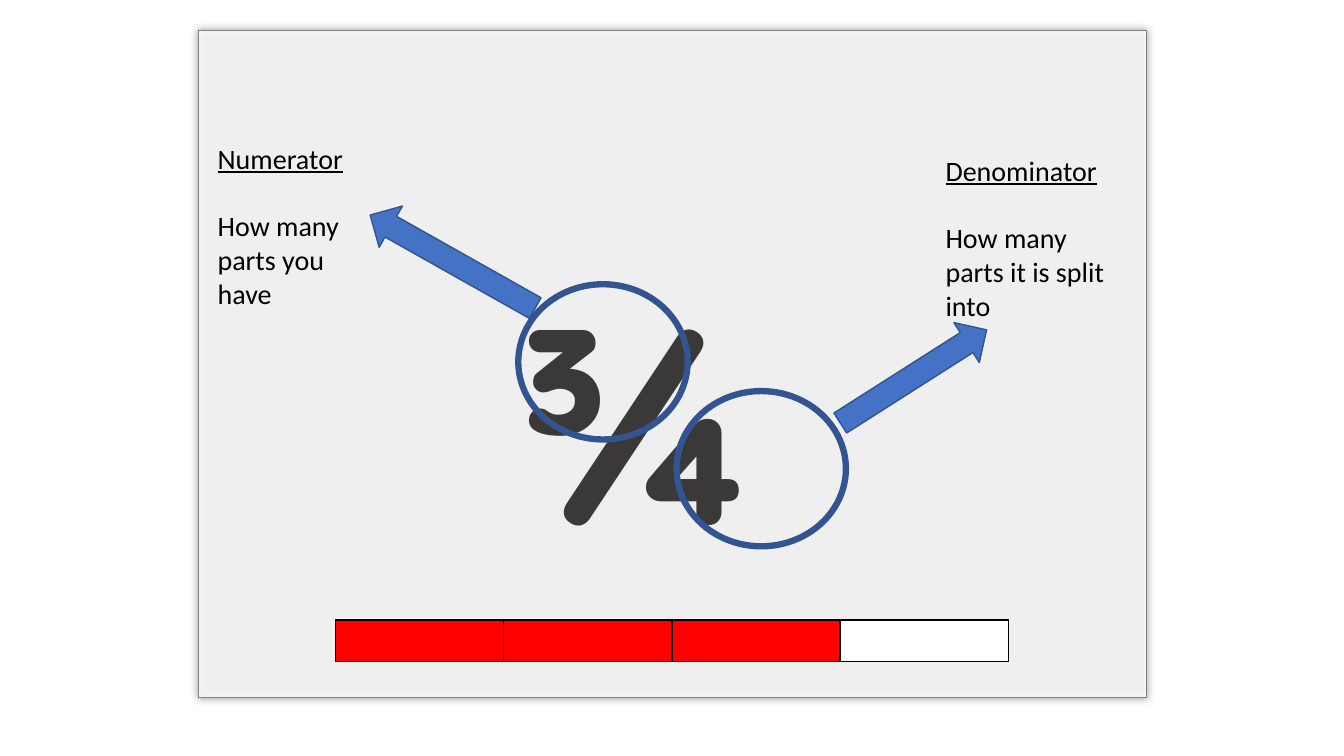
from lxml.etree import SubElement as Sub
from pptx import Presentation
from pptx.dml.color import RGBColor
from pptx.enum.shapes import MSO_SHAPE as Kind
from pptx.enum.text import MSO_ANCHOR as Anchor, PP_ALIGN as Align
from pptx.oxml.ns import qn
from pptx.util import Inches, Pt

BLUE, EDGE, RED, WHITE, BLACK = "4472C4", "325491", "FF0000", "FFFFFF", "000000"


def paint(target, color):
    """Set a solid fill or a font colour."""
    if hasattr(target, "solid"):
        target.solid()
        target = target.fore_color
    else:
        target = target.color
    target.rgb = RGBColor.from_string(color)


def add_form(slide, kind, box, fill, edge, width, turn=0):
    form = slide.shapes.add_shape(kind, *map(Inches, box))
    form.shadow.inherit = False
    form.rotation = turn
    if fill:
        paint(form.fill, fill)
    else:
        form.fill.background()
    paint(form.line.fill, edge)
    form.line.width = Pt(width)
    return form


def add_panel(slide):
    """Draw the see-through panel with its soft shadow and the fraction."""
    panel = add_form(slide, Kind.RECTANGLE, (1.97, 0.3, 9.4, 6.62), WHITE, "808080", 1)
    props = panel._element.spPr
    tint = props.find(qn("a:solidFill")).find(qn("a:srgbClr"))
    Sub(tint, qn("a:alpha"), val="82000")
    glow = Sub(props.find(qn("a:effectLst")), qn("a:outerShdw"),
               blurRad=str(Pt(5)), dist="0", dir="0", algn="ctr", rotWithShape="0")
    Sub(Sub(glow, qn("a:srgbClr"), val=BLACK), qn("a:alpha"), val="40000")

    frame = panel.text_frame
    frame.text = "¾"
    frame.vertical_anchor = Anchor.TOP
    frame.margin_top, frame.margin_bottom = Inches(2.15), 0
    frame.margin_left, frame.margin_right = 0, Inches(0.78)
    para = frame.paragraphs[0]
    para.alignment = Align.CENTER
    font = para.runs[0].font
    font.name, font.size, font.bold = "Quicksand", Pt(199), True
    paint(font, "3B3838")


def add_note(slide, box, title, body):
    frame = slide.shapes.add_textbox(*map(Inches, box)).text_frame
    frame.word_wrap = True
    frame.text = f"{title}\n{body}"
    head, rest = frame.paragraphs
    rest.space_before = Pt(24.4)
    for para in (head, rest):
        font = para.runs[0].font
        font.name, font.size = "Calibri", Pt(20)
        paint(font, BLACK)
    head.runs[0].font.underline = True


def add_border(cell):
    props = cell._tc.get_or_add_tcPr()
    for at, side in enumerate(("lnL", "lnR", "lnT", "lnB")):
        line = Sub(props, qn(f"a:{side}"), w=str(Pt(1)))
        Sub(Sub(line, qn("a:solidFill")), qn("a:srgbClr"), val=BLACK)
        props.insert(at, line)


def add_bar(slide, box, parts, whole):
    """Draw a bar of equal parts with the first ones coloured."""
    table = slide.shapes.add_table(1, whole, *map(Inches, box)).table
    for i, cell in enumerate(table.rows[0].cells):
        paint(cell.fill, RED if i < parts else WHITE)
        add_border(cell)


def main():
    deck = Presentation()
    deck.slide_width, deck.slide_height = Inches(13.33), Inches(7.5)
    slide = deck.slides.add_slide(deck.slide_layouts[6])

    add_panel(slide)
    add_form(slide, Kind.OVAL, (5.14, 2.82, 1.68, 1.54), None, EDGE, 4.5)
    add_form(slide, Kind.RIGHT_ARROW, (3.55, 2.36, 1.88, 0.47), BLUE, EDGE, 1, 209.4)
    add_note(slide, (2.06, 1.35, 1.69, 1.78), "Numerator", "How many parts you have")
    add_form(slide, Kind.OVAL, (6.71, 3.88, 1.68, 1.54), None, EDGE, 4.5)
    add_form(slide, Kind.RIGHT_ARROW, (8.2, 3.5, 1.72, 0.47), BLUE, EDGE, 1, 327.5)
    add_note(slide, (9.28, 1.47, 1.94, 1.78), "Denominator",
             "How many parts it is split into")
    add_bar(slide, (3.33, 6.15, 6.67, 0.41), 3, 4)
    deck.save("out.pptx")


if __name__ == "__main__":
    main()
